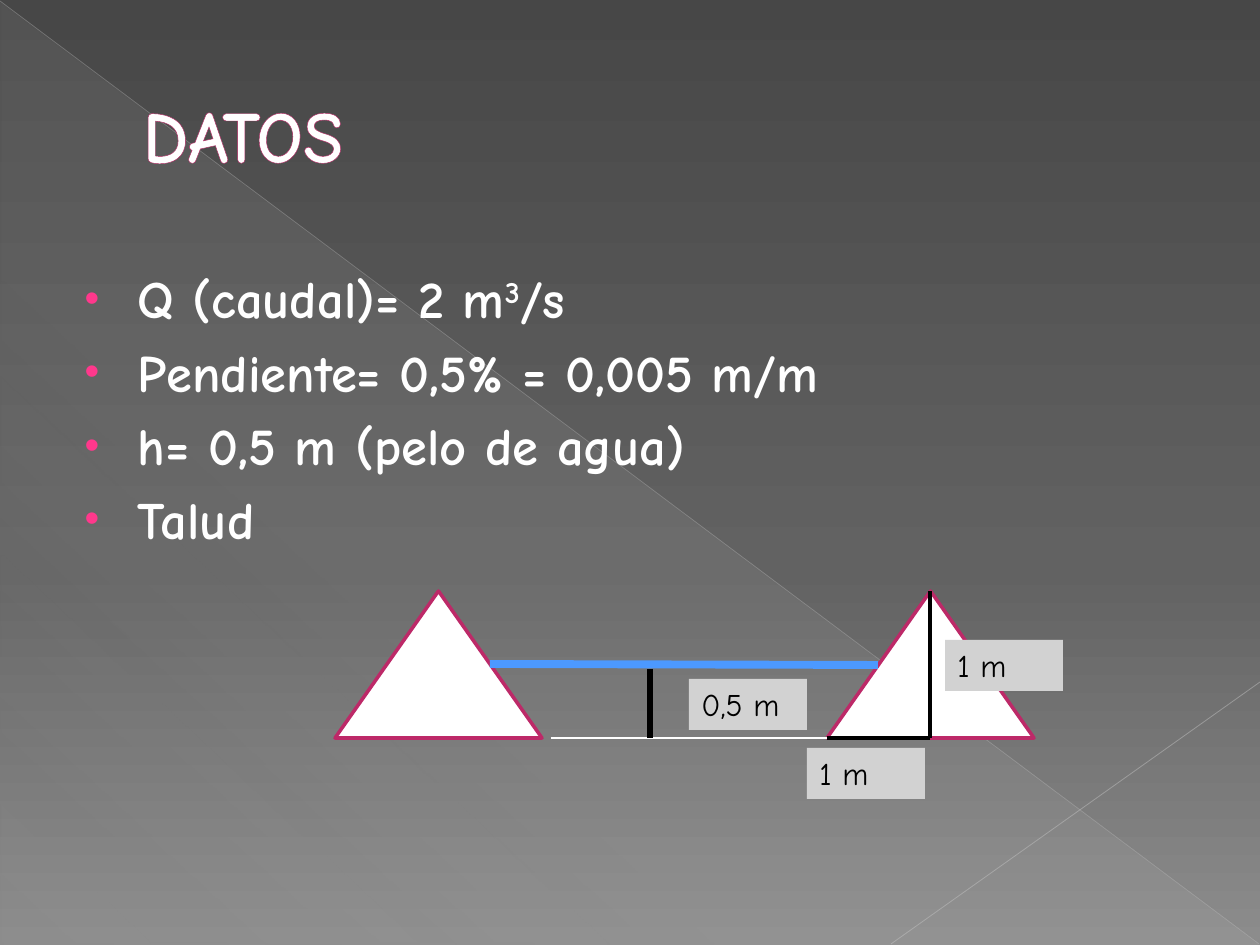
from lxml.etree import SubElement
from pptx import Presentation
from pptx.dml.color import RGBColor
from pptx.enum.shapes import MSO_CONNECTOR, MSO_SHAPE as SHAPE
from pptx.enum.text import MSO_ANCHOR, PP_ALIGN
from pptx.oxml.ns import qn
from pptx.util import Pt

FONT = "Comic Neue"
PX = 914400 / 126

# Content
TITLE = "DATOS"
ITEMS = [  # (text, superscript?) runs
    [("Q (caudal)= 2 m", False), ("3", True), ("/s", False)],
    [("Pendiente= 0,5% = 0,005 m/m", False)],
    [("h= 0,5 m (pelo de agua)", False)],
    [("Talud", False)],
]
LABELS = [("1 m", 945, 640), ("1 m", 807, 748), ("0,5 m", 689, 679)]
LABEL_SIZE = (118, 51)

# Canal section: two equal banks on one ground line
BANK_LEFTS = (827, 335)
BANK_W, BANK_H, CREST = 207, 147, 591
GROUND = CREST + BANK_H
AXIS = BANK_LEFTS[0] + BANK_W // 2
SLOPE_LINES = [  # x1, y1, x2, y2, colour, points
    (551, GROUND, BANK_LEFTS[0], GROUND, "FFFFFF", 0.75),
    (AXIS, CREST, AXIS, GROUND, "000000", 2.25),
    (AXIS, GROUND, BANK_LEFTS[0], GROUND, "000000", 2.25),
]
WATER_LINE = (490, 664, 878, 665, "4C99FF", 4.5)
DEPTH_LINE = (650, 669, 650, GROUND, "000000", 3)

# Backdrop: stops are position %, colour, opacity %
BACK_STOPS = [(0, "474747", 100), (60, "626262", 100), (100, "8C8C8C", 100)]
WEDGE_STOPS = [(0, "D2D2D2", 10), (70, "D2D2D2", 8), (100, "D2D2D2", 1)]
BACK_LINES = [
    (0, 1, 1259, 944, "BFBFBF", 0.39, 35),
    (1260, 682, 891, 944, "C6C6C6", 0.47, 45),
]


def px(*lengths):
    return [round(n * PX) for n in lengths]


def rgb(colour):
    return RGBColor.from_string(colour)


def add_colour(parent, colour, opacity=100):
    node = SubElement(parent, qn("a:srgbClr"), val=colour)
    if opacity < 100:
        SubElement(node, qn("a:alpha"), val=str(opacity * 1000))


def set_gradient(fill, holder, stops, angle):
    fill.gradient()
    gradient = holder.find(".//" + qn("a:gradFill"))
    for child in list(gradient):
        gradient.remove(child)
    stop_list = SubElement(gradient, qn("a:gsLst"))
    for position, colour, opacity in stops:
        stop = SubElement(stop_list, qn("a:gs"), pos=str(position * 1000))
        add_colour(stop, colour, opacity)
    SubElement(gradient, qn("a:lin"), ang=str(angle * 60000), scaled="0")


def add_line(shapes, x1, y1, x2, y2, colour, points, opacity=100):
    line = shapes.add_connector(MSO_CONNECTOR.STRAIGHT, *px(x1, y1, x2, y2))
    line.line.width = Pt(points)
    line.line.color.rgb = rgb(colour)
    if opacity < 100:
        node = line._element.spPr.find(".//" + qn("a:srgbClr"))
        SubElement(node, qn("a:alpha"), val=str(opacity * 1000))
    SubElement(line._element.spPr, qn("a:effectLst"))


def add_run(paragraph, text, size, colour, bold=False):
    run = paragraph.add_run()
    run.text = text
    style = {"name": FONT, "size": Pt(size), "bold": bold}
    for key, value in style.items():
        setattr(run.font, key, value)
    run.font.color.rgb = rgb(colour)
    return run


def place(shape, *box):
    for key, value in zip(("left", "top", "width", "height"), px(*box)):
        setattr(shape, key, value)


def set_indent(paragraph, margin, indent=0):
    props = paragraph._p.get_or_add_pPr()
    props.set("marL", str(px(margin)[0]))
    props.set("indent", str(px(indent)[0]))
    paragraph.alignment = PP_ALIGN.LEFT
    return props


def add_backdrop(slide):
    set_gradient(slide.background.fill, slide._element, BACK_STOPS, 90)
    wedge = slide.shapes.add_shape(SHAPE.RIGHT_TRIANGLE, *px(1, 2, 1259, 943))
    set_gradient(wedge.fill, wedge._element, WEDGE_STOPS, 133)
    wedge.line.fill.background()
    wedge.shadow.inherit = False
    for line in BACK_LINES:
        add_line(slide.shapes, *line)


def fill_text(slide):
    title, body = slide.shapes.title, slide.placeholders[1]
    for holder in (title, body):  # in front of the backdrop
        slide.shapes._spTree.append(holder._element)

    place(title, 63, 37, 1134, 193)
    title.text_frame.vertical_anchor = MSO_ANCHOR.MIDDLE
    heading = title.text_frame.paragraphs[0]
    set_indent(heading, 67)
    run = add_run(heading, TITLE, 42, "FFFFFF", True)
    outline = SubElement(run.font._element, qn("a:ln"), w=str(Pt(0.5)))
    add_colour(SubElement(outline, qn("a:solidFill")), "B12761")
    run.font._element.insert(0, outline)

    place(body, 63, 260, 1134, 630)
    frame = body.text_frame
    for i, runs in enumerate(ITEMS):
        item = frame.add_paragraph() if i else frame.paragraphs[0]
        props = set_indent(item, 62, -53)
        add_colour(SubElement(props, qn("a:buClr")), "FF388C")
        SubElement(props, qn("a:buSzPct"), val="80000")
        SubElement(props, qn("a:buFont"), typeface="Arial")
        SubElement(props, qn("a:buChar"), char="•")
        for text, raised in runs:
            run = add_run(item, text, 30, "FFFFFF", True)
            if raised:
                run.font._element.set("baseline", "30000")


def add_label(shapes, text, left, top):
    label = shapes.add_textbox(*px(left, top, *LABEL_SIZE))
    label.fill.solid()
    label.fill.fore_color.rgb = rgb("D2D2D2")
    label.text_frame.word_wrap = True
    add_run(label.text_frame.paragraphs[0], text, 18, "000000")


def add_section(shapes):
    for left in BANK_LEFTS:
        bank = shapes.add_shape(SHAPE.ISOSCELES_TRIANGLE,
                                *px(left, CREST, BANK_W, BANK_H))
        bank.fill.solid()
        bank.fill.fore_color.rgb = rgb("FFFFFF")
        bank.line.color.rgb = rgb("BD2968")
        bank.line.width = Pt(2)
        bank.shadow.inherit = False
    for line in SLOPE_LINES:
        add_line(shapes, *line)
    *slope_labels, depth_label = LABELS
    for label in slope_labels:
        add_label(shapes, *label)
    add_line(shapes, *WATER_LINE)
    add_label(shapes, *depth_label)
    add_line(shapes, *DEPTH_LINE)


def main():
    deck = Presentation()
    deck.slide_width, deck.slide_height = px(1260, 945)
    slide = deck.slides.add_slide(deck.slide_layouts[1])
    add_backdrop(slide)
    fill_text(slide)
    add_section(slide.shapes)
    deck.save("out.pptx")


if __name__ == "__main__":
    main()
